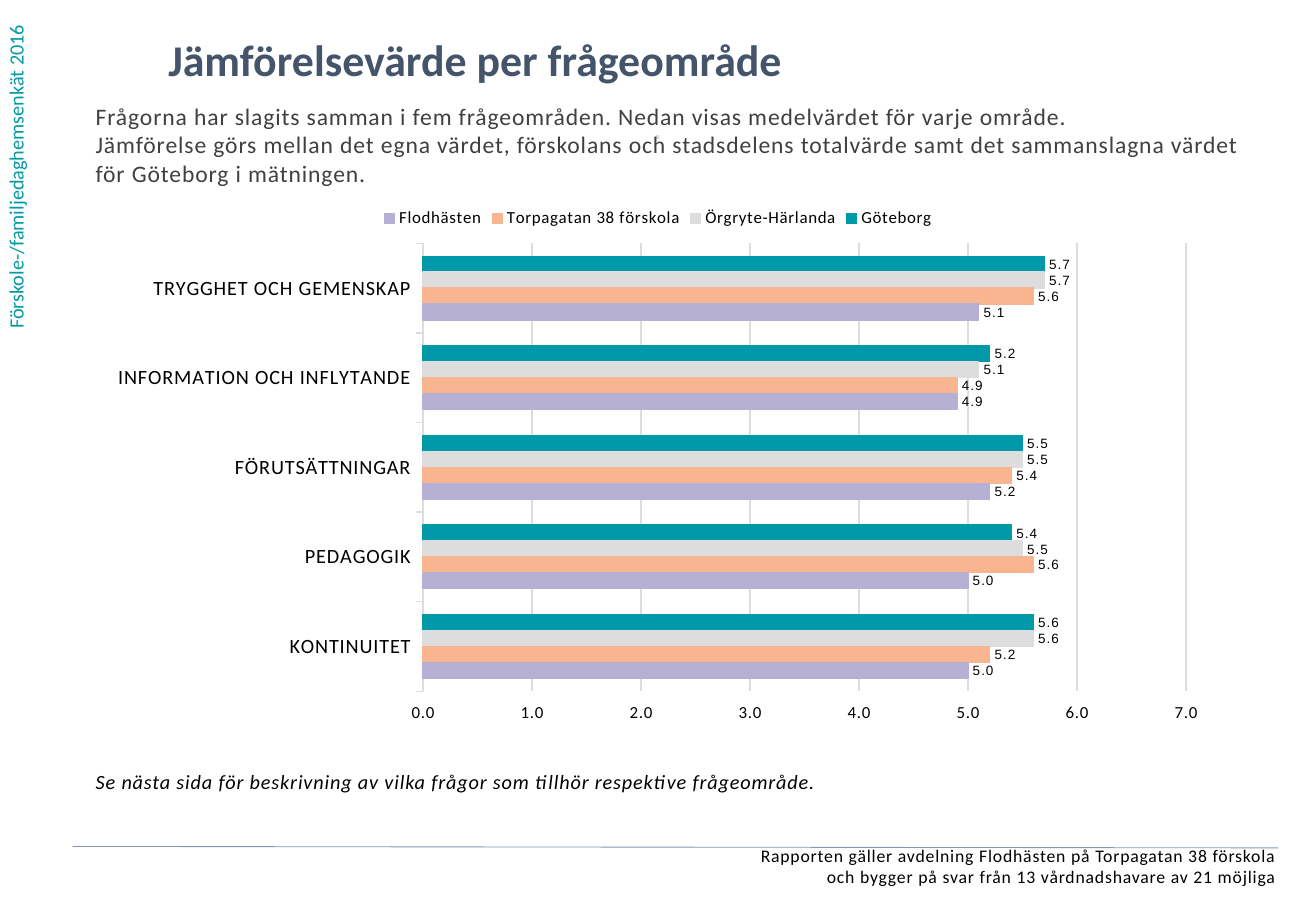
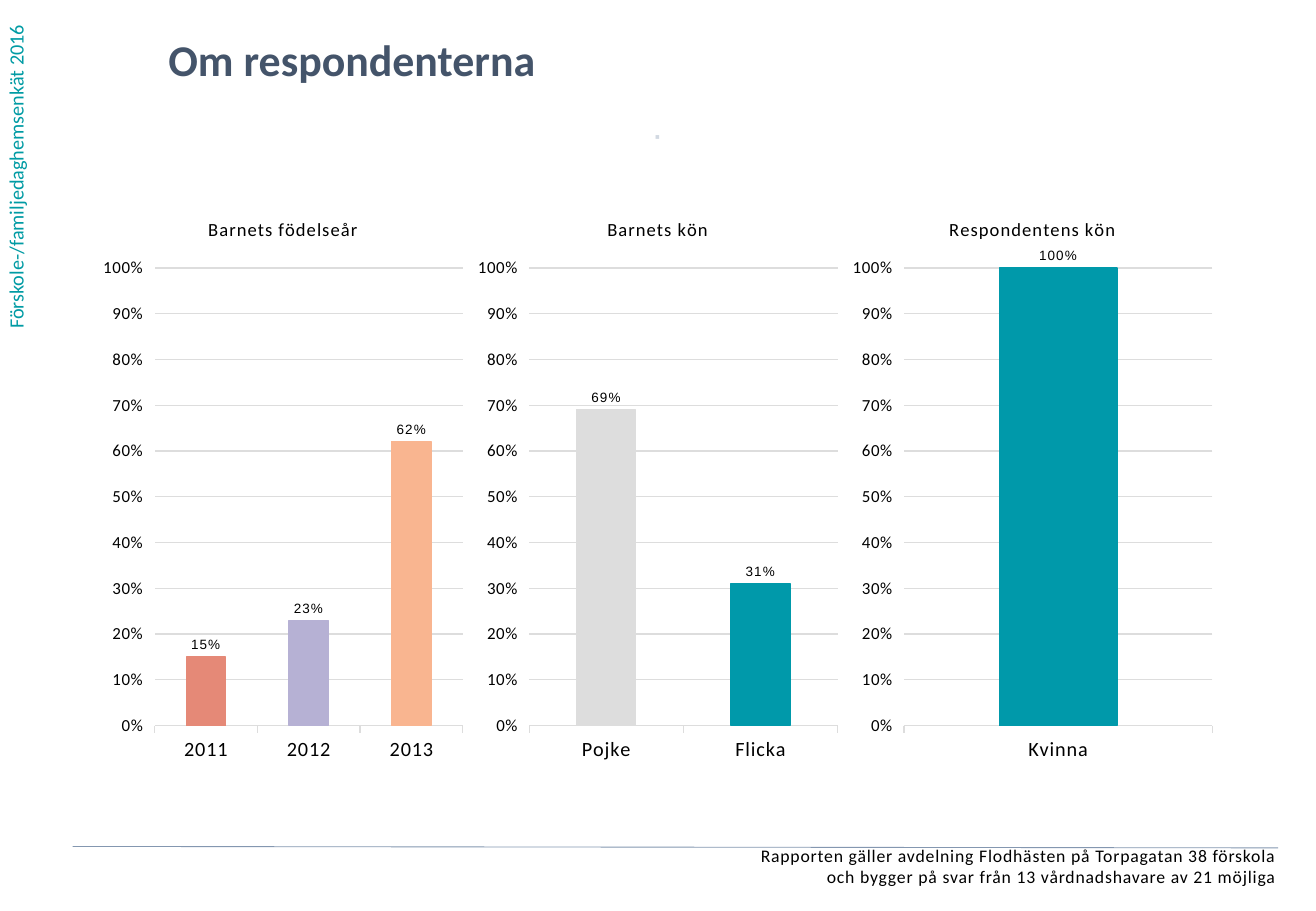
"""Build two survey slides: a comparison by question area and the respondent profile."""
import pptx
import pptx.chart.data
import pptx.dml.color
import pptx.enum.chart
import pptx.enum.shapes
import pptx.enum.text
import pptx.oxml.ns
import pptx.util
import lxml.etree

Cm = pptx.util.Cm
Pt = pptx.util.Pt
COLOURS = {
    "title": "44546A",
    "side": "009BA4",
    "body": "404040",
    "black": "000000",
    "dot": "D2D9E2",
    "rule": "8497B0",
    "teal": "0099AA",
    "grey": "DDDDDD",
    "peach": "F9B590",
    "lilac": "B6B1D4",
    "coral": "E58977",
}
FONT = "Calibri"
SPACING = "50"
CHART_LEFT, CHART_TOP, CHART_WIDTH = 2, 4.08, 23.5
SIDE_TEXT = "Förskole-/familjedaghemsenkät 2016"
FOOTER_TEXT = (
    "Rapporten gäller avdelning Flodhästen på Torpagatan 38 förskola\n"
    "och bygger på svar från 13 vårdnadshavare av 21 möjliga"
)
INTRO_TEXT = (
    "Frågorna har slagits samman i fem frågeområden. Nedan visas medelvärdet för varje område.\n"
    "Jämförelse görs mellan det egna värdet, förskolans och stadsdelens totalvärde samt det "
    "sammanslagna värdet för Göteborg i mätningen."
)
NOTE_TEXT = "Se nästa sida för beskrivning av vilka frågor som tillhör respektive frågeområde."
AREAS = [
    "TRYGGHET OCH GEMENSKAP",
    "INFORMATION OCH INFLYTANDE",
    "FÖRUTSÄTTNINGAR",
    "PEDAGOGIK",
    "KONTINUITET",
]
AREA_SERIES = [
    ("Göteborg", [5.7, 5.2, 5.5, 5.4, 5.6], "teal"),
    ("Örgryte-Härlanda", [5.7, 5.1, 5.5, 5.5, 5.6], "grey"),
    ("Torpagatan 38 förskola", [5.6, 4.9, 5.4, 5.6, 5.2], "peach"),
    ("Flodhästen", [5.1, 4.9, 5.2, 5.0, 5.0], "lilac"),
]
PROFILES = [
    ("Barnets födelseår", ["2013", "2012", "2011"], [0.62, 0.23, 0.15], ["peach", "lilac", "coral"]),
    ("Barnets kön", ["Flicka", "Pojke"], [0.31, 0.69], ["teal", "grey"]),
    ("Respondentens kön", ["Kvinna"], [1], ["teal"]),
]


def rgb(name):
    return pptx.dml.color.RGBColor.from_string(COLOURS[name])


def style_font(font, size, colour="black", name=FONT, bold=False, italic=False):
    font.name = name
    font.size = Pt(size)
    font.bold = bold
    font.italic = italic
    font.color.rgb = rgb(colour)


def add_text(page, text, place, size, colour, align="LEFT", spaced=True, vertical=False, **style):
    box = page.shapes.add_textbox(*map(Cm, place))
    frame = box.text_frame
    frame.margin_left = frame.margin_right = frame.margin_top = frame.margin_bottom = 0
    frame.word_wrap = True
    if vertical:
        frame._txBody.bodyPr.set("vert", "vert270")
    frame.text = text
    for para in frame.paragraphs:
        para.alignment = getattr(pptx.enum.text.PP_ALIGN, align)
        for span in para.runs:
            style_font(span.font, size, colour, **style)
            if spaced:
                span._r.get_or_add_rPr().set("spc", SPACING)


def add_rule(page):
    rule = page.shapes.add_connector(
        pptx.enum.shapes.MSO_CONNECTOR.STRAIGHT, Cm(1.52), Cm(17.7), Cm(26.72), Cm(17.73)
    )
    rule.line.color.rgb = rgb("rule")
    rule.line.width = Pt(0.5)
    lxml.etree.SubElement(rule._element.spPr, pptx.oxml.ns.qn("a:effectLst"))


def add_page(deck, title):
    page = deck.slides.add_slide(deck.slide_layouts[6])
    add_text(page, SIDE_TEXT, (0.07, 0, 0.8, 6.88), 12, "side", spaced=False, vertical=True)
    add_text(page, title, (3.52, 0.69, 21.18, 1.45), 26, "title", spaced=False, bold=True)
    add_text(page, FOOTER_TEXT, (0.3, 17.66, 26.38, 1.09), 10.5, "black", align="RIGHT")
    add_text(page, "⋅", (9.83, 2.59, 7.83, 0.99), 12, "dot", align="CENTER", bold=True)
    add_rule(page)
    return page


def paint(part, colour):
    part.format.fill.solid()
    part.format.fill.fore_color.rgb = rgb(colour)
    part.format.line.color.rgb = rgb(colour)
    part.format.line.width = Pt(0.75)


def style_axes(chart, number_format, maximum, unit):
    enums = pptx.enum.chart
    categories, values = chart.category_axis, chart.value_axis
    categories.reverse_order = True
    categories.major_tick_mark = values.major_tick_mark = enums.XL_TICK_MARK.OUTSIDE
    values.tick_label_position = enums.XL_TICK_LABEL_POSITION.HIGH
    values.minimum_scale, values.maximum_scale, values.major_unit = 0, maximum, unit
    values.has_major_gridlines = True
    for line in (categories.format.line, values.major_gridlines.format.line):
        line.color.rgb = rgb("grey")
        line.width = Pt(0.75)
    values.format.line.fill.background()
    values.tick_labels.number_format = number_format
    values.tick_labels.number_format_is_linked = False
    style_font(categories.tick_labels.font, 12)
    style_font(values.tick_labels.font, 10)


def space_letters(chart):
    for props in chart._chartSpace.iter(pptx.oxml.ns.qn("a:defRPr")):
        props.set("spc", SPACING)


def add_bars(page, kind, place, categories, series_rows, number_format, maximum, unit, title=None):
    enums = pptx.enum.chart
    data = pptx.chart.data.CategoryChartData(number_format=number_format)
    data.categories = categories
    for name, values, _ in series_rows:
        data.add_series(name, values)
    chart = page.shapes.add_chart(getattr(enums.XL_CHART_TYPE, kind), *map(Cm, place), data).chart
    style_font(chart.font, 10)
    chart.has_legend = title is None
    chart.has_title = title is not None
    if title:
        chart.chart_title.text_frame.text = title
        span = chart.chart_title.text_frame.paragraphs[0].runs[0]
        style_font(span.font, 11)
        span._r.get_or_add_rPr().set("spc", SPACING)
    else:
        chart.legend.position = enums.XL_LEGEND_POSITION.TOP
        chart.legend.include_in_layout = False
        style_font(chart.legend.font, 10)
    plot = chart.plots[0]
    plot.gap_width = 162
    plot.vary_by_categories = False
    for series, (_, _, colour) in zip(plot.series, series_rows):
        paint(series, colour)
        labels = series.data_labels
        labels.show_value = True
        labels.number_format = number_format
        labels.number_format_is_linked = False
        labels.position = enums.XL_LABEL_POSITION.OUTSIDE_END
        style_font(labels.font, 8, name="Arial")
    style_axes(chart, number_format, maximum, unit)
    space_letters(chart)
    return chart


def add_comparison(deck):
    page = add_page(deck, "Jämförelsevärde per frågeområde")
    add_text(page, INTRO_TEXT, (2, 2.13, 24.03, 1.9), 14, "body")
    add_text(page, NOTE_TEXT, (2, 16.08, 23.5, 0.6), 12, "black", italic=True)
    place = (CHART_LEFT, CHART_TOP, CHART_WIDTH, 11.25)
    add_bars(page, "BAR_CLUSTERED", place, AREAS, AREA_SERIES, "0.0;0.0", 7, 1)


def add_respondents(deck):
    page = add_page(deck, "Om respondenterna")
    width = CHART_WIDTH / len(PROFILES)
    for index, (title, categories, values, colours) in enumerate(PROFILES):
        place = (CHART_LEFT + index * width, CHART_TOP, width, 12.09)
        rows = [("Series 1", values, "teal")]
        chart = add_bars(page, "COLUMN_CLUSTERED", place, categories, rows, "0%;0%", 1, 0.1, title)
        for number, colour in enumerate(colours):
            paint(chart.plots[0].series[0].points[number], colour)


def main():
    deck = pptx.Presentation()
    deck.slide_width, deck.slide_height = Cm(27.51), Cm(19.05)
    add_comparison(deck)
    add_respondents(deck)
    deck.save("out.pptx")


if __name__ == "__main__":
    main()
